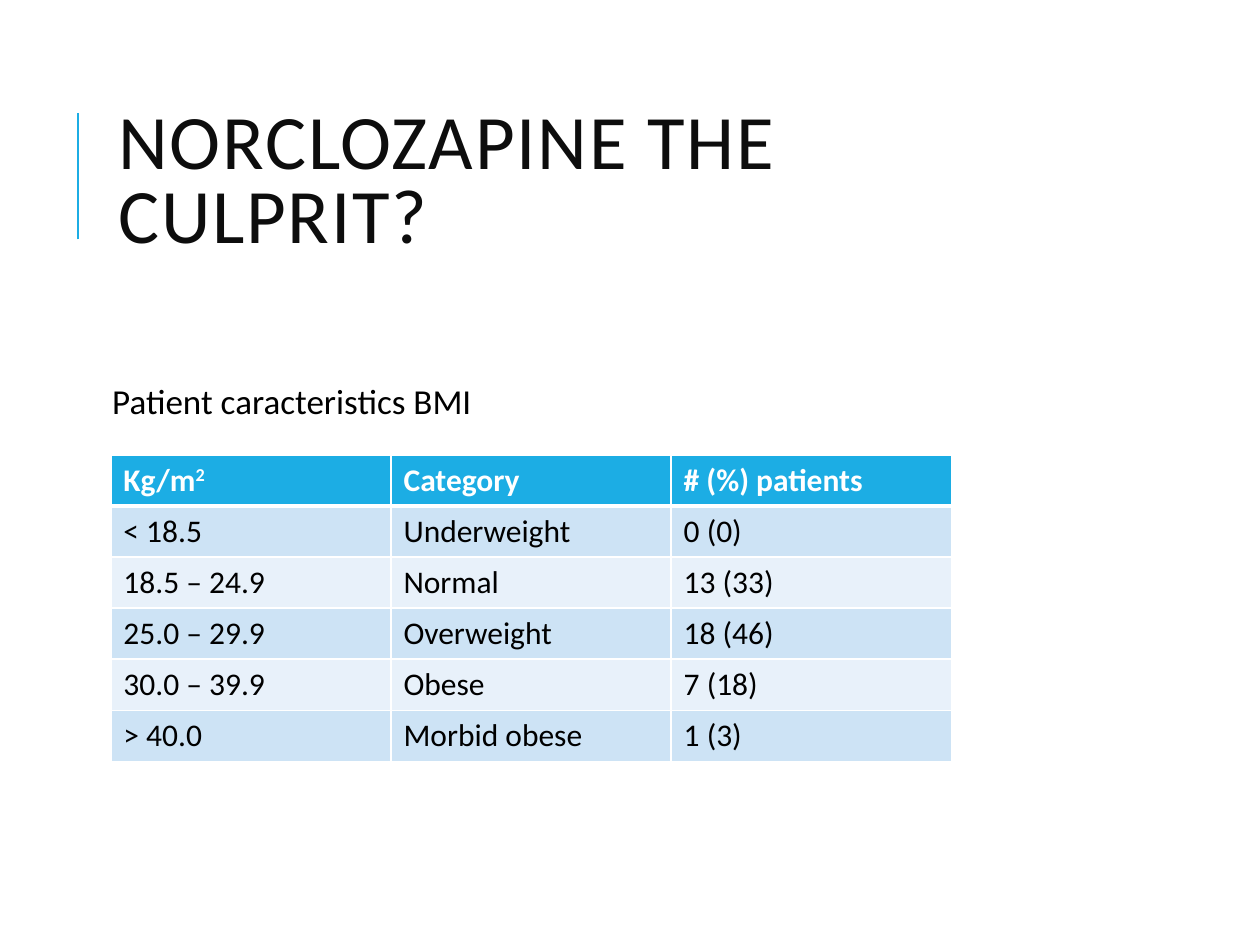
import dataclasses
import typing

import pptx
import pptx.dml.color
import pptx.enum.shapes
import pptx.enum.text
import pptx.oxml
import pptx.oxml.ns
import pptx.util
from pptx.util import Inches


@dataclasses.dataclass(frozen=True)
class Theme:
    font: str = "Calibri"
    accent: str = "1CADE4"
    ink: str = "0D0D0D"
    text: str = "000000"
    white: str = "FFFFFF"
    bands: typing.Tuple[str, str] = ("CDE3F5", "E8F1FA")
    title: int = 44
    body: int = 20
    cell: int = 18


@dataclasses.dataclass(frozen=True)
class Row:
    range: str
    label: str
    count: str
    power: str = ""


THEME = Theme()
ROWS = [
    Row("Kg/m", "Category", "# (%) patients", "2"),
    Row("< 18.5", "Underweight", "0 (0)"),
    Row("18.5 – 24.9", "Normal", "13 (33)"),
    Row("25.0 – 29.9", "Overweight", "18 (46)"),
    Row("30.0 – 39.9", "Obese", "7 (18)"),
    Row("> 40.0", "Morbid obese", "1 (3)"),
]


def rgb(code: str) -> pptx.dml.color.RGBColor:
    return pptx.dml.color.RGBColor.from_string(code)


def style(para, size: int, color: str, bold: bool = False) -> None:
    for run in para.runs:
        run.font.name = THEME.font
        run.font.size = pptx.util.Pt(size)
        run.font.color.rgb = rgb(color)
        run.font.bold = bold


def place(shape, left: float, top: float, width: float, height: float) -> None:
    shape.left, shape.top = Inches(left), Inches(top)
    shape.width, shape.height = Inches(width), Inches(height)
    shape.text_frame.word_wrap = True
    shape.text_frame.auto_size = pptx.enum.text.MSO_AUTO_SIZE.NONE


def draw_rule(slide) -> None:
    rule = slide.shapes.add_connector(
        pptx.enum.shapes.MSO_CONNECTOR.STRAIGHT,
        Inches(0.62), Inches(1.9), Inches(0.62), Inches(0.9))
    rule.line.color.rgb = rgb(THEME.accent)
    rule.line.width = pptx.util.Pt(1.5)
    pptx.oxml.ns.qn("a:effectLst")
    rule._element.spPr.append(pptx.oxml.parse_xml(
        f'<a:effectLst {pptx.oxml.ns.nsdecls("a")}/>'))


def draw_title(slide) -> None:
    title = slide.shapes.title
    place(title, 0.84, 0.64, 7.97, 1.64)
    frame = title.text_frame
    frame.text = "NORCLOZAPINE THE CULPRIT?"
    frame.vertical_anchor = pptx.enum.text.MSO_ANCHOR.MIDDLE
    para = frame.paragraphs[0]
    para.alignment = pptx.enum.text.PP_ALIGN.LEFT
    para.line_spacing = 0.8
    style(para, THEME.title, THEME.ink)
    para.runs[0].font._element.set("spc", "100")


def draw_body(slide) -> None:
    body = slide.placeholders[1]
    place(body, 0.84, 2.5, 7.97, 4.4)
    frame = body.text_frame
    frame.text = "Patient caracteristics BMI"
    frame.margin_left = frame.margin_right = frame.margin_bottom = Inches(0.05)
    frame.margin_top = Inches(0.55)
    para = frame.paragraphs[0]
    para.line_spacing = 0.9
    para.space_before = pptx.util.Pt(12)
    para.space_after = pptx.util.Pt(2)
    style(para, THEME.body, THEME.text)
    props = para._p.get_or_add_pPr()
    props.set("marL", "0")
    props.set("indent", "0")
    props.append(pptx.oxml.parse_xml(
        f'<a:buNone {pptx.oxml.ns.nsdecls("a")}/>'))


def edge(cell, side: str, width: float) -> None:
    cell._tc.get_or_add_tcPr().append(pptx.oxml.parse_xml(
        f'<a:ln{side} {pptx.oxml.ns.nsdecls("a")} w="{pptx.util.Pt(width)}">'
        f'<a:solidFill><a:srgbClr val="{THEME.white}"/></a:solidFill>'
        f'</a:ln{side}>'))


def draw_cell(cell, text: str, power: str, index: int) -> None:
    head = index == 0
    para = cell.text_frame.paragraphs[0]
    para.text = text
    if power:
        run = para.add_run()
        run.text = power
        run.font._element.set("baseline", "30000")
    style(para, THEME.cell, THEME.white if head else THEME.text, head)
    widths = {"L": 1, "R": 1, "T": 3 if index == 1 else 1, "B": 3 if head else 1}
    for side, width in widths.items():
        edge(cell, side, width)
    cell.fill.solid()
    cell.fill.fore_color.rgb = rgb(
        THEME.accent if head else THEME.bands[(index - 1) % 2])


def draw_table(slide, rows: typing.List[Row]) -> None:
    table = slide.shapes.add_table(
        len(rows), 3, Inches(0.88), Inches(3.61),
        Inches(6.67), Inches(2.43)).table
    for index, row in enumerate(rows):
        draw_cell(table.cell(index, 0), row.range, row.power, index)
        draw_cell(table.cell(index, 1), row.label, "", index)
        draw_cell(table.cell(index, 2), row.count, "", index)


def main() -> None:
    deck = pptx.Presentation()
    deck.slide_width, deck.slide_height = Inches(10), Inches(7.5)
    slide = deck.slides.add_slide(deck.slide_layouts[1])
    draw_rule(slide)
    draw_title(slide)
    draw_body(slide)
    draw_table(slide, ROWS)
    deck.save("out.pptx")


if __name__ == "__main__":
    main()
